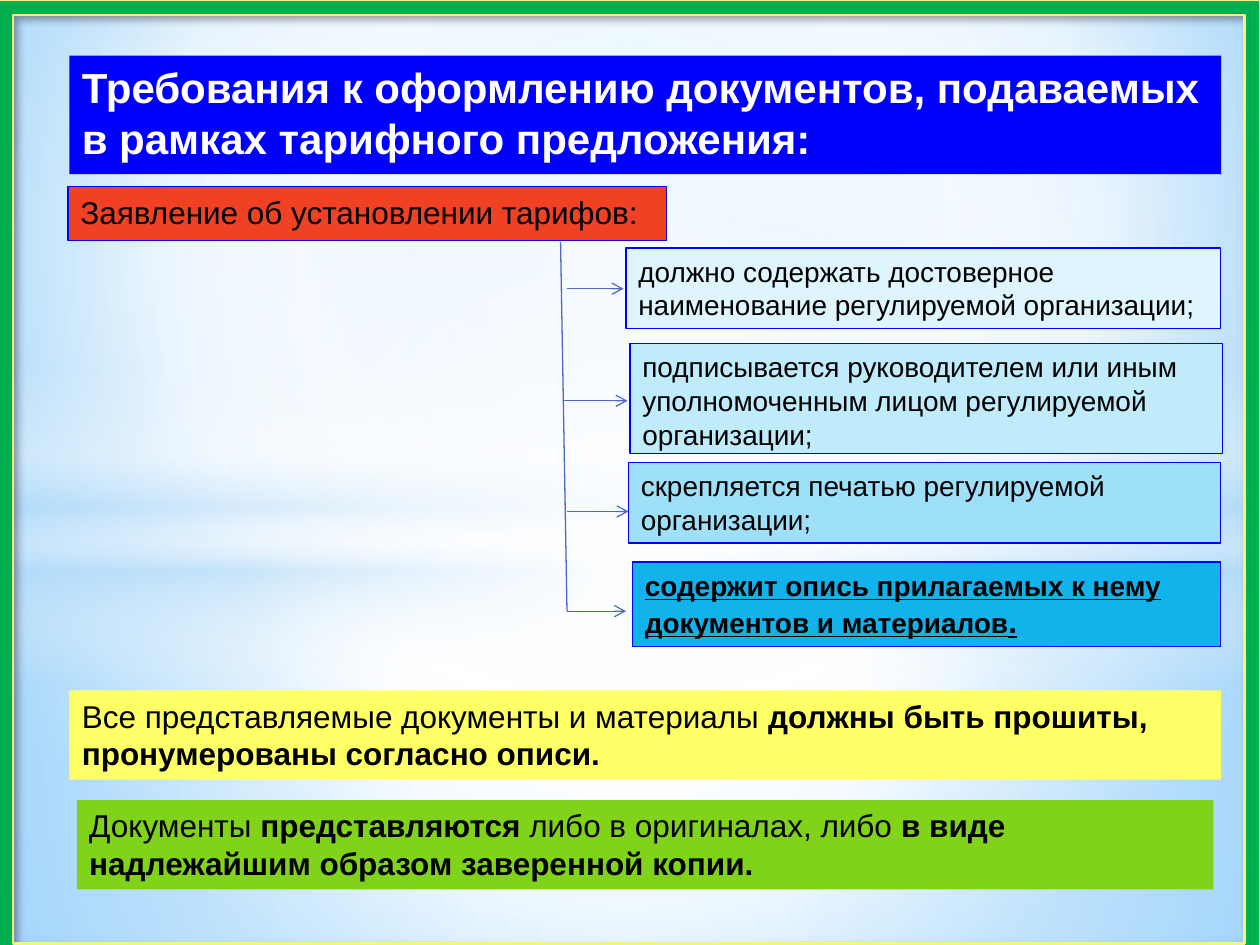
import pptx
import pptx.dml.color
import pptx.enum.shapes
import pptx.enum.text
import pptx.oxml.ns
import pptx.util
from lxml import etree

Cm = pptx.util.Cm
Pt = pptx.util.Pt
qn = pptx.oxml.ns.qn
SHAPE = pptx.enum.shapes.MSO_SHAPE
CENTRE = (50, 50, 50, 50)


def rgb(hex_code):
    return pptx.dml.color.RGBColor.from_string(hex_code)


def child(parent, tag, **attributes):
    values = {name: str(value) for name, value in attributes.items()}
    return etree.SubElement(parent, qn(tag), values)


def replace_solid_fill(properties, stops, focus=None, angle=0):
    """Swap a solid fill for a gradient of (position, colour, opacity) stops."""
    solid = properties.find(qn("a:solidFill"))
    gradient = etree.Element(qn("a:gradFill"), rotWithShape="1")
    stop_list = child(gradient, "a:gsLst")
    for position, colour, opacity in stops:
        stop = child(stop_list, "a:gs", pos=position * 1000)
        tint = child(stop, "a:srgbClr", val=colour)
        if opacity < 100:
            child(tint, "a:alpha", val=opacity * 1000)
    if focus:
        shade = child(gradient, "a:path", path="circle")
        edges = {side: part * 1000 for side, part in zip("ltrb", focus)}
        child(shade, "a:fillToRect", **edges)
    else:
        child(gradient, "a:lin", ang=angle * 60000, scaled=1)
    properties.replace(solid, gradient)


def add_text(paragraph, text, size=18, colour="000000", bold=False, underline=False):
    run = paragraph.add_run()
    run.text = text
    run.font.name = "Arial"
    run.font.size = Pt(size)
    run.font.color.rgb = rgb(colour)
    run.font.bold = bold
    run.font.underline = underline


class SlideBuilder:
    OUTLINE = "0000FF"
    ARROW = "4E67C8"
    HAIRLINE = 0.75

    def __init__(self, slide):
        self.slide = slide

    def background(self, stops, focus):
        self.slide.background.fill.solid()
        properties = self.slide.element.xpath("p:cSld/p:bg/p:bgPr")[0]
        replace_solid_fill(properties, stops, focus)

    def shape(self, kind, place, fill, outline=None, width=HAIRLINE):
        shape = self.slide.shapes.add_shape(kind, *map(Cm, place))
        shape.shadow.inherit = False
        shape.fill.solid()
        shape.fill.fore_color.rgb = rgb(fill)
        if outline:
            shape.line.color.rgb = rgb(outline)
            shape.line.width = Pt(width)
        else:
            shape.line.fill.background()
        return shape

    def glow(self, kind, place, stops, focus=None, angle=0):
        shape = self.shape(kind, place, "FFFFFF")
        replace_solid_fill(shape.element.spPr, stops, focus, angle)

    def frame(self, place, fill, outline):
        frame = self.shape(SHAPE.FRAME, place, fill, outline, 1.25)
        frame.adjustments[0] = 0.016
        effects = frame.element.spPr.find(qn("a:effectLst"))
        shadow = child(effects, "a:outerShdw", blurRad=Pt(4), dist=Pt(3),
                       dir=45 * 60000, algn="tl", rotWithShape=0)
        child(child(shadow, "a:srgbClr", val="000000"), "a:alpha", val=40000)

    def box(self, place, fill, runs, outline=None, grow=False):
        """Add a left-aligned box; runs are (text, format) pairs."""
        frame = self.shape(SHAPE.RECTANGLE, place, fill, outline).text_frame
        frame.word_wrap = True
        frame.vertical_anchor = pptx.enum.text.MSO_ANCHOR.TOP
        if grow:
            frame.auto_size = pptx.enum.text.MSO_AUTO_SIZE.SHAPE_TO_FIT_TEXT
        paragraph = frame.paragraphs[0]
        paragraph.alignment = pptx.enum.text.PP_ALIGN.LEFT
        for text, style in runs:
            add_text(paragraph, text, **style)

    def line(self, start, end, arrow=False):
        line = self.slide.shapes.add_connector(
            pptx.enum.shapes.MSO_CONNECTOR.STRAIGHT, *map(Cm, start + end))
        line.line.color.rgb = rgb(self.ARROW)
        line.line.width = Pt(self.HAIRLINE)
        if arrow:
            child(line.line._get_or_add_ln(), "a:tailEnd", type="arrow")
        child(line.element.spPr, "a:effectLst")


def draw_backdrop(builder):
    builder.background([(0, "9ED5FF", 100), (60, "FFFFFF", 100), (100, "5BB9FF", 100)],
                       (20, 10, 20, 60))
    builder.glow(SHAPE.RECTANGLE, (0, 10.74, 25.4, 8.31),
                 [(0, "FFFFFF", 92), (37, "FFFFFF", 77), (100, "B4DCFA", 80)], CENTRE)
    builder.glow(SHAPE.RECTANGLE, (0, 0, 25.4, 10.74),
                 [(0, "FFFFFF", 90), (48, "FFFFFF", 63), (100, "B4DCFA", 80)], CENTRE)
    builder.glow(SHAPE.RECTANGLE, (0, 7.37, 25.4, 6.35),
                 [(0, "FFFFFF", 0), (29, "FFFFFF", 30), (45, "B4DCFA", 40),
                  (55, "FFFFFF", 26), (65, "B4DCFA", 60), (100, "FFFFFF", 0)], angle=90)
    builder.glow(SHAPE.OVAL, (0, 4.45, 25.4, 14.17),
                 [(0, "FFFFFF", 100), (54, "FFFFFF", 0)], CENTRE)
    builder.frame((-0.05, 0, 25.45, 19.33), "00B050", "F3F67C")


def main():
    deck = pptx.Presentation()
    deck.slide_width, deck.slide_height = Cm(25.4), Cm(19.05)
    builder = SlideBuilder(deck.slides.add_slide(deck.slide_layouts[6]))
    draw_backdrop(builder)

    plain, strong = {}, {"bold": True}
    item = {"size": 16}
    key_item = {"size": 16, "bold": True, "underline": True}

    builder.box((1.4, 1.12, 23.22, 2.39), "0000FF", [
        ("Требования к оформлению документов, подаваемых в рамках тарифного предложения:",
         {"size": 24, "colour": "FFFFFF", "bold": True})])
    builder.box((1.37, 3.76, 12.07, 1.09), "F14124",
                [("Заявление об установлении тарифов:", plain)], builder.OUTLINE)

    requirements = [
        ((12.62, 5, 11.99, 1.63), "DFF5FD", True,
         [("должно содержать достоверное наименование регулируемой организации;", item)]),
        ((12.7, 6.93, 11.94, 2.21), "BFEBFA", False,
         [("подписывается руководителем или иным уполномоченным лицом "
           "регулируемой организации;", item)]),
        ((12.67, 9.32, 11.94, 1.63), "9EE0F8", True,
         [("скрепляется печатью регулируемой организации;", item)]),
        ((12.75, 11.33, 11.86, 1.7), "12B2EB", True,
         [("содержит опись прилагаемых к нему документов и материалов", key_item),
          (".", {**key_item, "size": 18})]),
    ]
    for place, fill, grow, runs in requirements:
        builder.box(place, fill, runs, builder.OUTLINE, grow)

    builder.box((1.4, 13.92, 23.22, 1.8), "FFFF66", [
        ("Все представляемые документы и материалы ", plain),
        ("должны быть прошиты, пронумерованы согласно описи.", strong)], grow=True)
    builder.box((1.55, 16.13, 22.91, 1.8), "81D31A", [
        ("Документы ", plain),
        ("представляются", strong),
        (" либо в оригиналах, либо ", plain),
        ("в виде надлежайшим образом заверенной копии.", strong)], grow=True)

    builder.line((11.3, 4.88), (11.43, 12.32))
    for left, right, height in [(11.43, 12.57, 5.82), (11.35, 12.65, 8.08),
                                (11.43, 12.67, 10.31), (11.43, 12.62, 12.32)]:
        builder.line((left, height), (right, height), arrow=True)

    deck.save("out.pptx")


if __name__ == "__main__":
    main()
